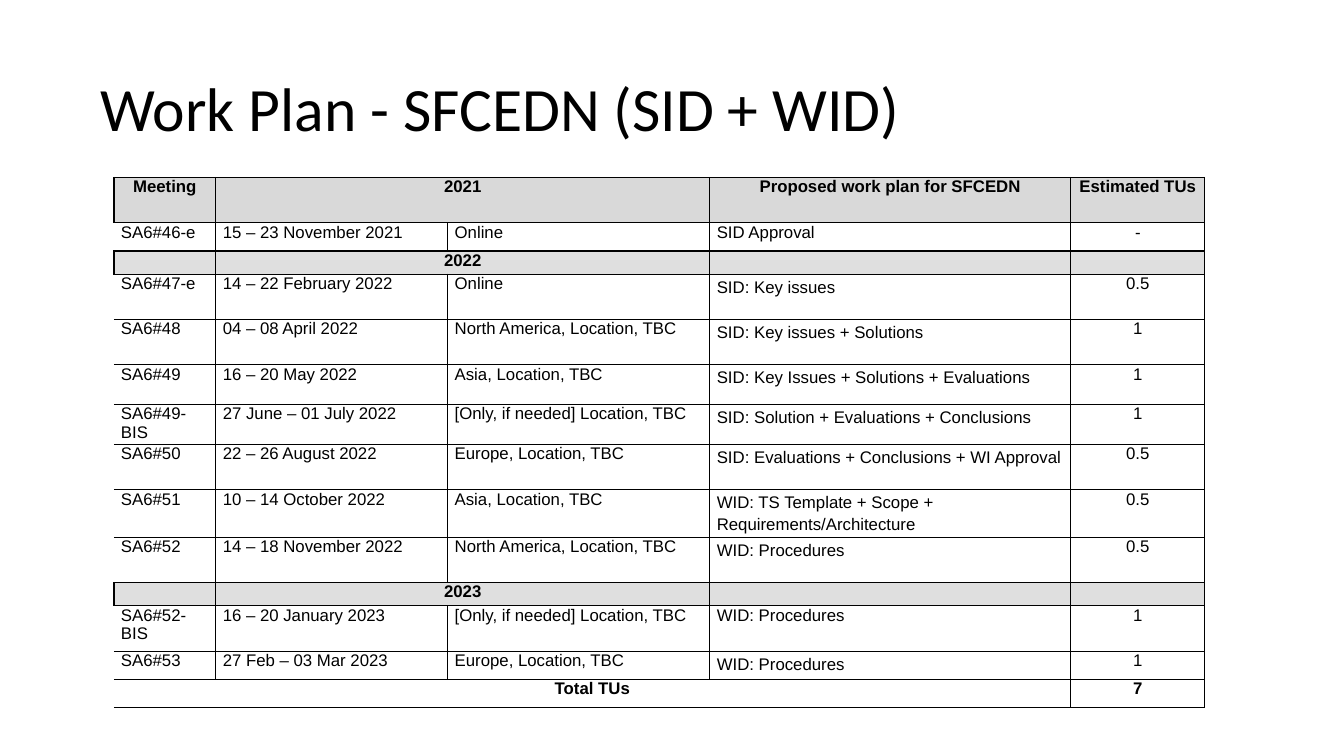
from lxml.etree import SubElement
from pptx import Presentation
from pptx.dml.color import RGBColor
from pptx.enum.text import MSO_ANCHOR as Anchor, PP_ALIGN as Align
from pptx.oxml.ns import qn
from pptx.util import Inches, Pt

BLACK, WHITE = "000000", "FFFFFF"
HEADER_GREY, YEAR_GREY = "D9D9D9", "DFDFDF"
COLUMN_WIDTHS = [1.01, 2.3, 2.6, 3.58, 1.33]
SINGLE_SPACED_MEETINGS = {"SA6#46-e", "SA6#52-BIS"}
ROWS = [
    (0.45, "header", ["Meeting", "2021", "", "Proposed work plan for SFCEDN", "Estimated TUs"]),
    (0.28, "meeting", ["SA6#46-e", "15 – 23 November 2021", "Online", "SID Approval", "-"]),
    (0.23, "year", ["", "2022", "", "", ""]),
    (0.45, "meeting", ["SA6#47-e", "14 – 22 February 2022", "Online", "SID: Key issues", "0.5"]),
    (0.45, "meeting", ["SA6#48", "04 – 08 April 2022", "North America, Location, TBC",
                       "SID: Key issues + Solutions", "1"]),
    (0.39, "meeting", ["SA6#49", "16 – 20 May 2022", "Asia, Location, TBC",
                       "SID: Key Issues + Solutions + Evaluations", "1"]),
    (0.39, "meeting", ["SA6#49-BIS", "27 June – 01 July 2022", "[Only, if needed] Location, TBC",
                       "SID: Solution + Evaluations + Conclusions", "1"]),
    (0.45, "meeting", ["SA6#50", "22 – 26 August 2022", "Europe, Location, TBC",
                       "SID: Evaluations + Conclusions + WI Approval", "0.5"]),
    (0.45, "meeting", ["SA6#51", "10 – 14 October 2022", "Asia, Location, TBC",
                       "WID: TS Template + Scope + Requirements/Architecture", "0.5"]),
    (0.45, "meeting", ["SA6#52", "14 – 18 November 2022", "North America, Location, TBC",
                       "WID: Procedures", "0.5"]),
    (0.23, "year", ["", "2023", "", "", ""]),
    (0.45, "meeting", ["SA6#52-BIS", "16 – 20 January 2023", "[Only, if needed] Location, TBC",
                       "WID: Procedures", "1"]),
    (0.28, "meeting", ["SA6#53", "27 Feb – 03 Mar 2023", "Europe, Location, TBC",
                       "WID: Procedures", "1"]),
    (0.28, "total", ["Total TUs", "", "", "", "7"]),
]
ROW_FILLS = {"header": HEADER_GREY, "year": YEAR_GREY, "meeting": WHITE, "total": WHITE}
ROW_MERGES = {"header": (1, 2), "year": (1, 2), "total": (0, 3)}


def color(value):
    return RGBColor.from_string(value)


def write_text(frame, text, font="Arial", size=12, bold=False, align=Align.LEFT,
               line_spacing=1.0, gap=0):
    frame.word_wrap = True
    paragraph = frame.paragraphs[0]
    paragraph.alignment = align
    paragraph.line_spacing = line_spacing
    paragraph.space_before = paragraph.space_after = Pt(gap)
    if not text:
        SubElement(paragraph._p, qn("a:endParaRPr"), sz=str(size * 100))
        return
    run = paragraph.add_run()
    run.text = text
    run.font.name = font
    run.font.size = Pt(size)
    run.font.bold = bold
    run.font.color.rgb = color(BLACK)


def set_borders(cell, left_visible):
    properties = cell._tc.get_or_add_tcPr()
    for position, side in enumerate(("L", "R", "T", "B")):
        line = SubElement(properties, qn(f"a:ln{side}"), w=str(Pt(1)))
        if side == "L" and not left_visible:
            SubElement(line, qn("a:noFill"))
        else:
            fill = SubElement(line, qn("a:solidFill"))
            SubElement(fill, qn("a:srgbClr"), val=BLACK)
        properties.insert(position, line)


def add_title(slide, left, top, width, height):
    shape = slide.shapes.add_textbox(Inches(left), Inches(top), Inches(width), Inches(height))
    shape.text_frame.vertical_anchor = Anchor.MIDDLE
    write_text(shape.text_frame, "Work Plan - SFCEDN (SID + WID)",
               font="Calibri", size=44, line_spacing=0.9)


def fill_cell(cell, text, kind, column, loose):
    cell.margin_left = cell.margin_right = Inches(0.07)
    cell.margin_top = Inches(0.01 if loose else 0)
    cell.margin_bottom = 0
    cell.vertical_anchor = Anchor.TOP
    cell.fill.solid()
    cell.fill.fore_color.rgb = color(ROW_FILLS[kind])
    centered = kind != "meeting" or column == len(COLUMN_WIDTHS) - 1
    write_text(cell.text_frame, text, bold=kind != "meeting", gap=1,
               align=Align.CENTER if centered else Align.LEFT,
               line_spacing=1.15 if loose else 1.0)
    set_borders(cell, left_visible=column > 0 or kind in ("header", "year"))


def add_work_plan(slide, left, top):
    width = sum(COLUMN_WIDTHS)
    height = sum(row[0] for row in ROWS)
    table = slide.shapes.add_table(len(ROWS), len(COLUMN_WIDTHS), Inches(left), Inches(top),
                                   Inches(width), Inches(height)).table
    table.first_row = table.horz_banding = False
    for column, column_width in zip(table.columns, COLUMN_WIDTHS):
        column.width = Inches(column_width)
    for row_index, (row_height, kind, texts) in enumerate(ROWS):
        table.rows[row_index].height = Inches(row_height)
        for column_index, text in enumerate(texts):
            loose = (kind == "meeting" and column_index == 3
                     and texts[0] not in SINGLE_SPACED_MEETINGS)
            fill_cell(table.cell(row_index, column_index), text, kind, column_index, loose)
        if kind in ROW_MERGES:
            first, last = ROW_MERGES[kind]
            table.cell(row_index, first).merge(table.cell(row_index, last))


def main():
    presentation = Presentation()
    presentation.slide_width = Inches(13.33)
    presentation.slide_height = Inches(7.5)
    slide = presentation.slides.add_slide(presentation.slide_layouts[6])
    add_title(slide, 0.9, 0.38, 11.5, 1.45)
    add_work_plan(slide, 1.13, 1.76)
    presentation.save("out.pptx")


if __name__ == "__main__":
    main()
